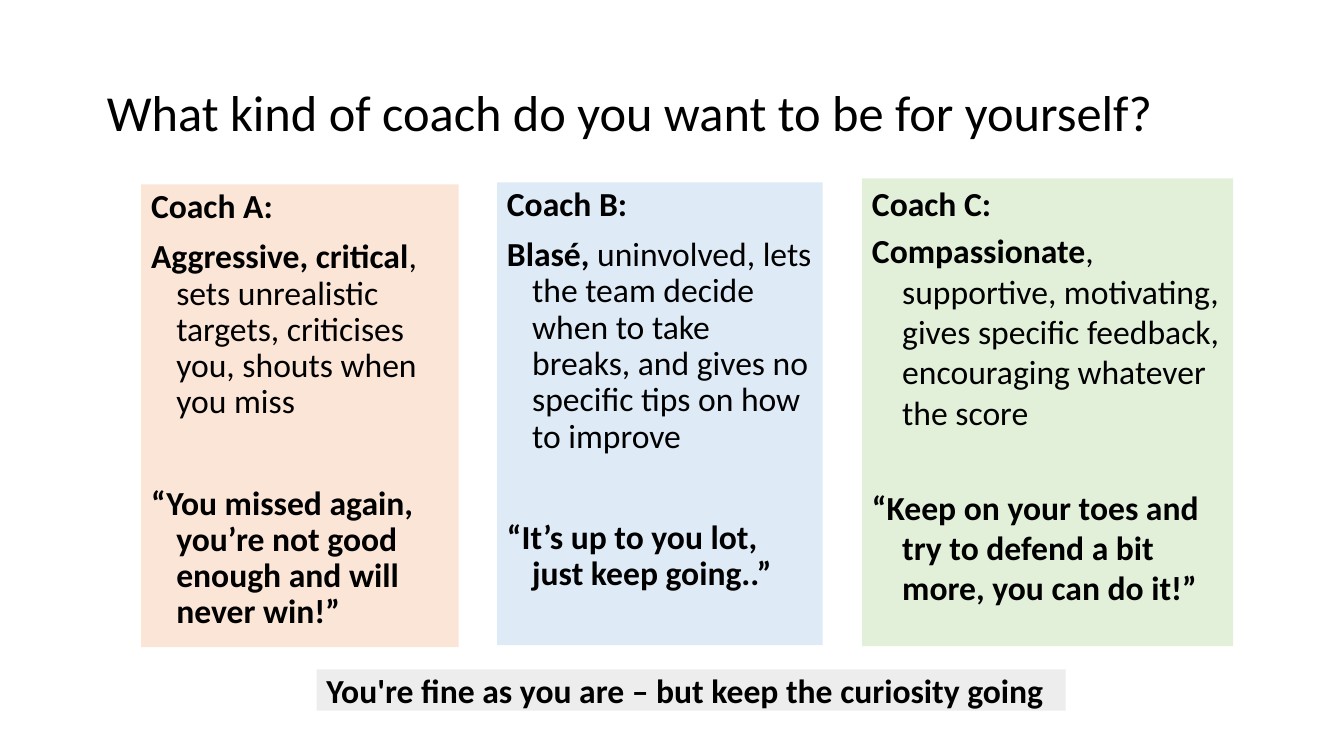
from pptx import Presentation
from pptx.dml.color import RGBColor
from pptx.enum.shapes import MSO_SHAPE
from pptx.enum.text import MSO_ANCHOR, MSO_AUTO_SIZE, PP_ALIGN
from pptx.util import Pt

PX = 9144
INK = {"text": "000000", "peach": "FBE5D6", "blue": "DEEBF7",
       "green": "E2F0D9", "gray": "EDEDED"}


def write(para, *runs, size=24, line=0.9, before=10, hang=0):
    para.alignment = PP_ALIGN.LEFT
    para.line_spacing = line
    para.space_before = Pt(before)
    if hang:
        props = para._p.get_or_add_pPr()
        props.set("marL", str(hang * PX))
        props.set("indent", str(-hang * PX))
    for text, bold in runs:
        run = para.add_run()
        run.text = text
        run.font.name = "Calibri"
        run.font.size = Pt(size)
        run.font.bold = bold
        run.font.color.rgb = RGBColor.from_string(INK["text"])


def panel(box, fill):
    shape = slide.shapes.add_shape(MSO_SHAPE.RECTANGLE, *[n * PX for n in box])
    shape.shadow.inherit = False
    shape.fill.solid()
    shape.fill.fore_color.rgb = RGBColor.from_string(INK[fill])
    shape.line.fill.background()
    frame = shape.text_frame
    frame.word_wrap = True
    frame.vertical_anchor = MSO_ANCHOR.TOP
    return frame


deck = Presentation()
deck.slide_width = 1333 * PX
deck.slide_height = 750 * PX
slide = deck.slides.add_slide(deck.slide_layouts[5])

title = slide.shapes.title
title.left, title.top, title.width, title.height = [n * PX for n in (96, 52, 1098, 125)]
title.text_frame.word_wrap = True
title.text_frame.auto_size = MSO_AUTO_SIZE.NONE
title.text_frame.vertical_anchor = MSO_ANCHOR.MIDDLE
write(title.text_frame.paragraphs[0],
      ("What kind of coach do you want to be for yourself?", False),
      size=36, before=0)

tight = {"line": 0.9, "before": 10, "hang": 25, "gap": 46.4}
loose = {"line": 1.0, "before": 4.8, "hang": 30, "gap": 38.9}
cards = [
    ("Coach A:", "Aggressive, critical",
     ", sets unrealistic targets, criticises you, shouts when you miss",
     "“You missed again, you’re not good enough and will never win!”",
     (140, 183, 315, 459), "peach", tight),
    ("Coach B:", "Blasé, ",
     "uninvolved, lets the team decide when to take breaks, and gives no specific tips on how to improve",
     "“It’s up to you lot, just keep going..”",
     (493, 181, 323, 459), "blue", tight),
    ("Coach C:", "Compassionate",
     ", supportive, motivating, gives specific feedback, encouraging whatever the score",
     "“Keep on your toes and try to defend a bit more, you can do it!”",
     (855, 177, 368, 464), "green", loose),
]
for name, trait, detail, quote, box, fill, style in cards:
    frame = panel(box, fill)
    line, before, hang = style["line"], style["before"], style["hang"]
    write(frame.paragraphs[0], (name, True), line=line, before=before)
    write(frame.add_paragraph(), (trait, True), (detail, False),
          line=line, before=before, hang=hang)
    write(frame.add_paragraph(), (quote, True),
          line=line, before=style["gap"], hang=hang)

note = panel((314, 664, 743, 41), "gray")
write(note.paragraphs[0],
      ("You're fine as you are – but keep the curiosity going", True))

deck.save("out.pptx")
